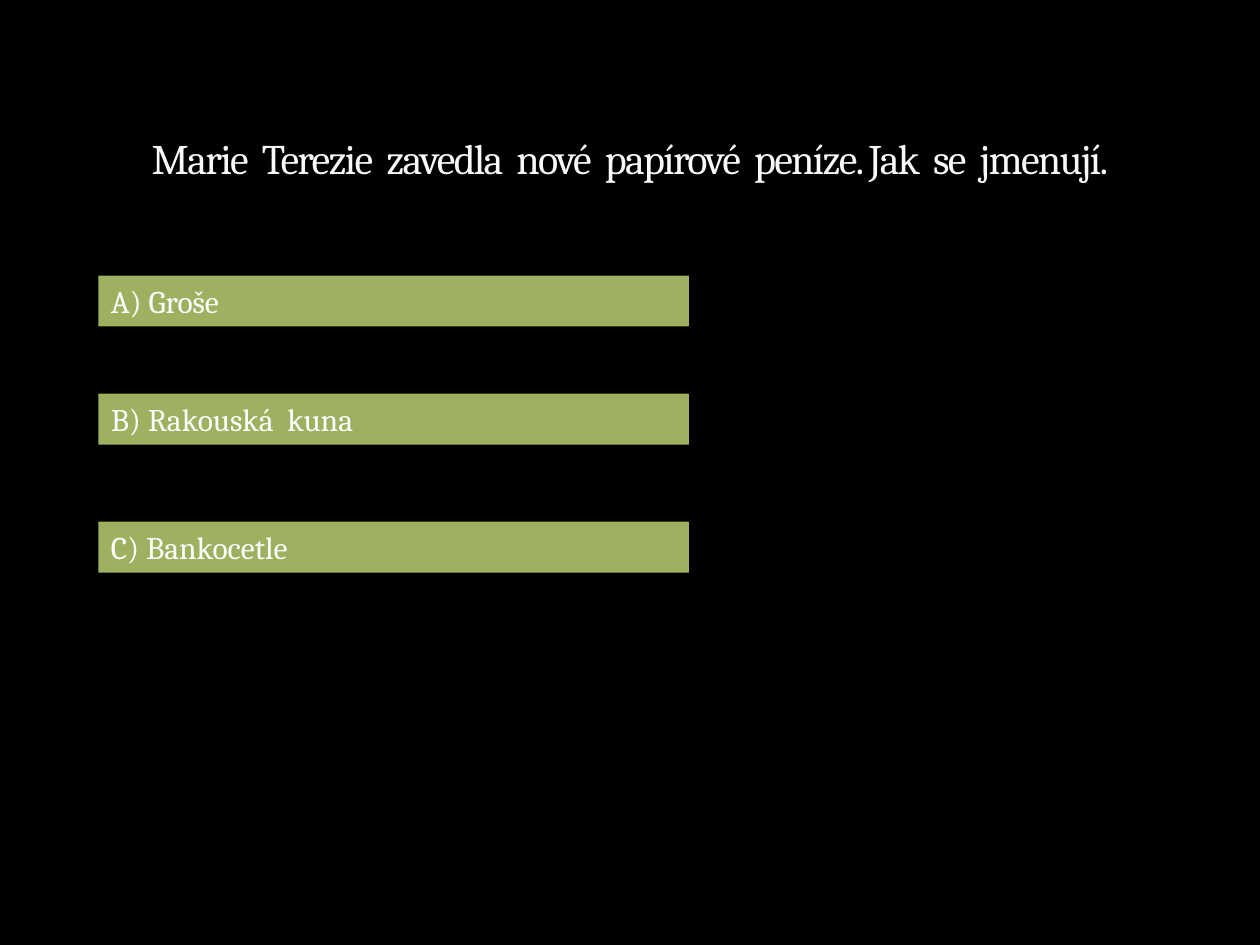
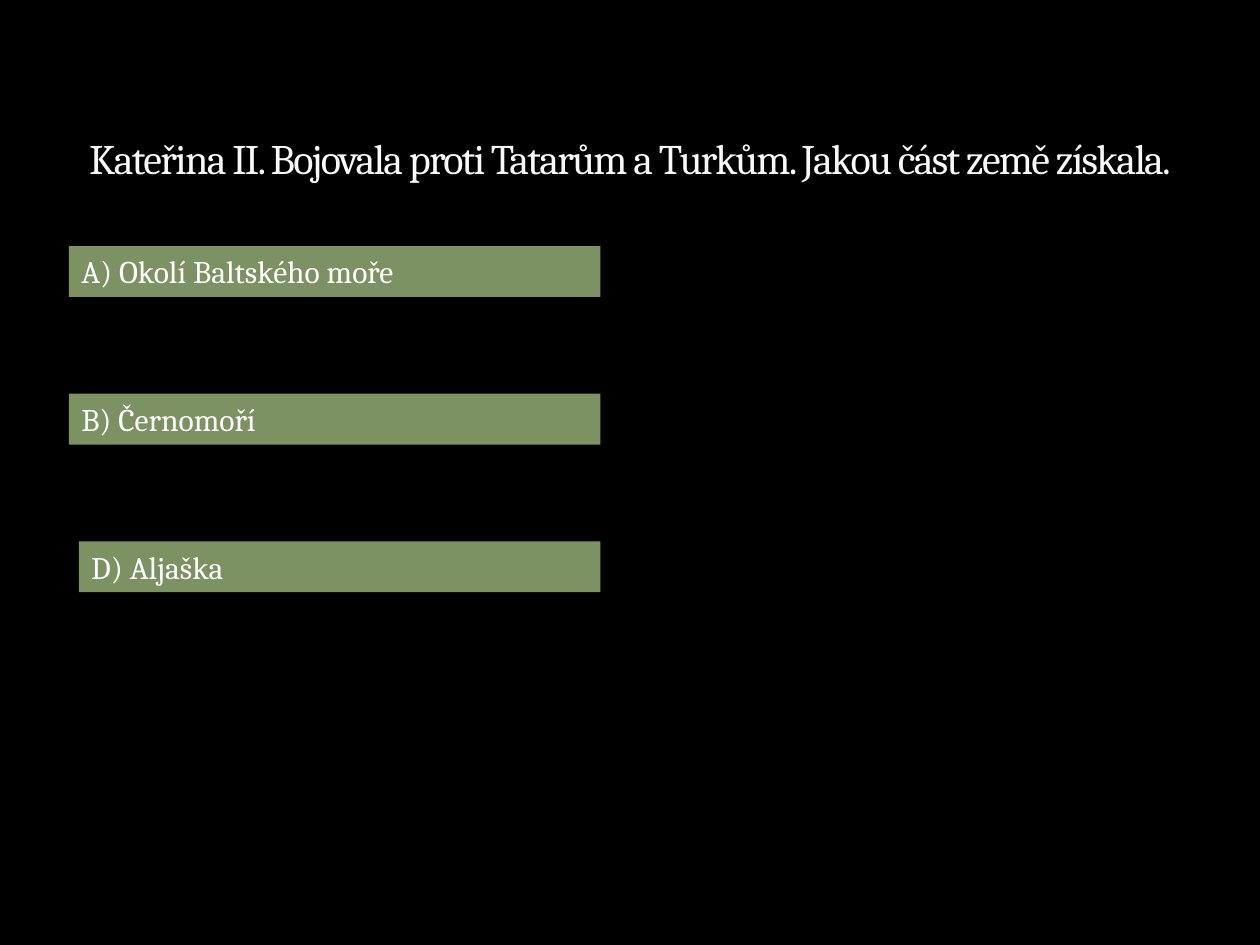
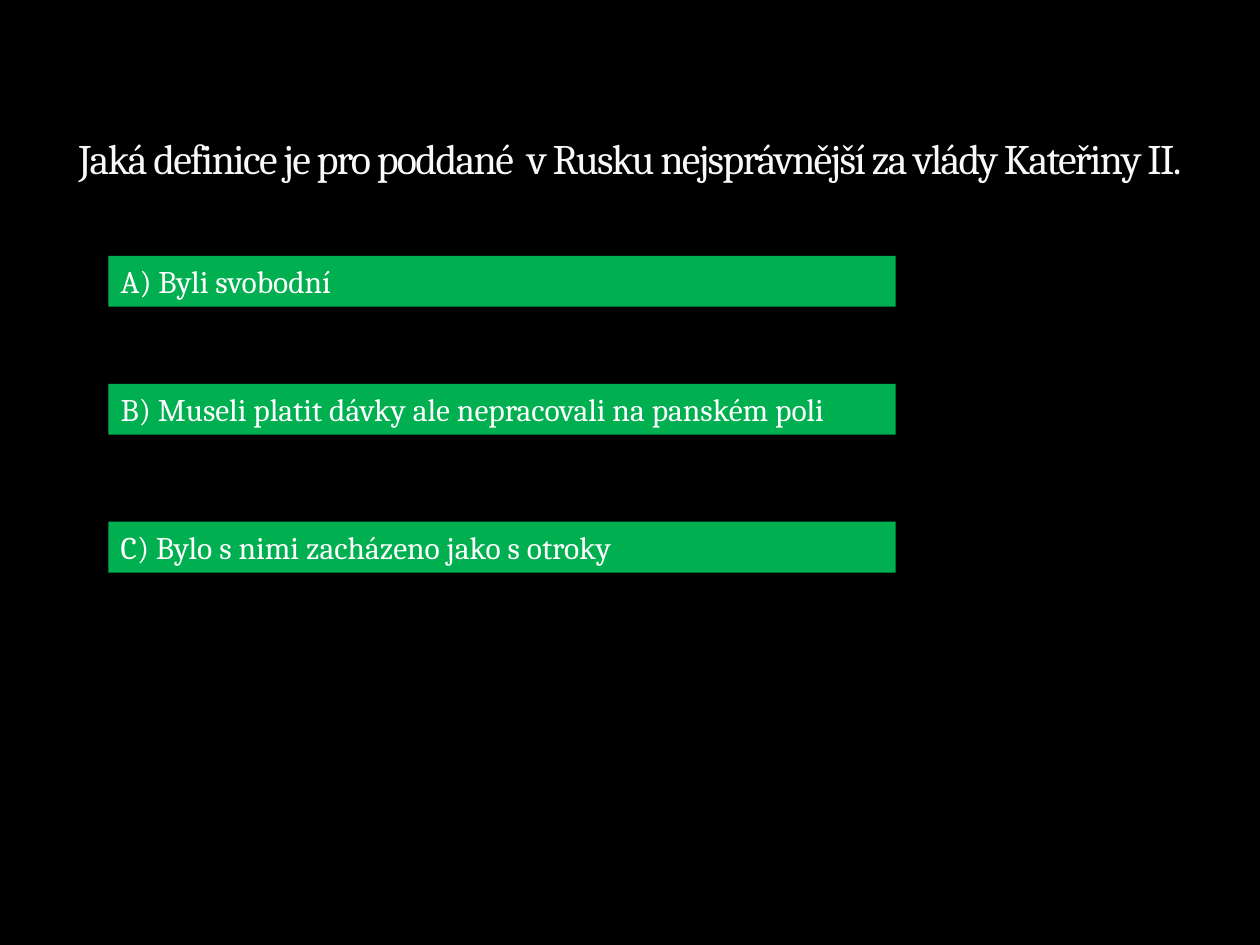
from lxml.etree import SubElement
from pptx import Presentation
from pptx.dml.color import RGBColor
from pptx.enum.shapes import MSO_SHAPE
from pptx.enum.text import MSO_ANCHOR, MSO_AUTO_SIZE, PP_ALIGN
from pptx.oxml.ns import qn
from pptx.util import Pt

WIDTH, HEIGHT = 720, 540
UNIT = HEIGHT / 96
FONT = "Cambria"
QUESTION_BOX = (36, 12, 648, 96)
ANSWER_HEIGHT = 29.08
COLOURS = {
    "background": "000000",
    "question": "F9F9F9",
    "question_outline": "3C4422",
    "answer": "FFFFFF",
    "olive": "9EB160",
    "sage": "7D9263",
    "green": "00B050",
}

# Answer areas are (left, width) in grid units; answers are (text, top, indent).
QUIZ = [
    ("Marie  Terezie  zavedla  nové  papírové  peníze. Jak  se  jmenují.",
     "olive", (10, 60),
     [("A) Groše", 28, 0), ("B) Rakouská  kuna", 40, 0), ("C) Bankocetle", 53, 0)]),
    ("Kateřina II. Bojovala proti Tatarům a Turkům. Jakou část země získala.",
     "sage", (7, 54),
     [("A) Okolí Baltského moře", 25, 0), ("B) Černomoří", 40, 0), ("D) Aljaška", 55, 1)]),
    ("Jaká definice je pro poddané  v Rusku nejsprávnější za vlády Kateřiny II.",
     "green", (11, 80),
     [("A) Byli svobodní", 26, 0),
      ("B) Museli platit dávky ale nepracovali na panském poli", 39, 0),
      ("C) Bylo s nimi zacházeno jako s otroky", 53, 0)]),
]


def colour(name):
    """Return the named colour."""
    return RGBColor.from_string(COLOURS[name])


def write(frame, text, size, colour_name, align):
    """Put one line of text in a frame and return its run."""
    frame.text = text
    frame.word_wrap = True
    paragraph = frame.paragraphs[0]
    paragraph.alignment = align
    run = paragraph.runs[0]
    run.font.name = FONT
    run.font.size = Pt(size)
    run.font.color.rgb = colour(colour_name)
    return run


def outline_and_tighten(run):
    """Give a run a faint outline and one point less letter spacing."""
    properties = run.font._element
    properties.set("spc", "-100")
    line = properties.makeelement(qn("a:ln"), {"w": str(Pt(0.25))})
    properties.insert(0, line)
    fill = SubElement(line, qn("a:solidFill"))
    tint = SubElement(fill, qn("a:srgbClr"), val=COLOURS["question_outline"])
    SubElement(tint, qn("a:alpha"), val="25000")


def add_question(slide, text, box):
    """Set the question centred at the bottom of its box."""
    question = slide.shapes.add_textbox(*map(Pt, box))
    frame = question.text_frame
    frame.vertical_anchor = MSO_ANCHOR.BOTTOM
    outline_and_tighten(write(frame, text, 24, "question", PP_ALIGN.CENTER))


def add_answer(slide, text, fill_name, box):
    """Draw one answer bar."""
    answer = slide.shapes.add_shape(MSO_SHAPE.RECTANGLE, *map(Pt, box))
    answer.shadow.inherit = False
    answer.fill.solid()
    answer.fill.fore_color.rgb = colour(fill_name)
    answer.line.fill.background()
    frame = answer.text_frame
    frame.vertical_anchor = MSO_ANCHOR.TOP
    write(frame, text, 18, "answer", PP_ALIGN.LEFT)
    frame.auto_size = MSO_AUTO_SIZE.SHAPE_TO_FIT_TEXT


def add_quiz_slide(deck, question, fill_name, area, answers):
    """Add a slide with a question and its answer bars."""
    slide = deck.slides.add_slide(deck.slide_layouts[6])
    slide.background.fill.solid()
    slide.background.fill.fore_color.rgb = colour("background")
    add_question(slide, question, QUESTION_BOX)
    left, width = area
    for text, top, indent in answers:
        box = ((left + indent) * UNIT, top * UNIT, (width - indent) * UNIT, ANSWER_HEIGHT)
        add_answer(slide, text, fill_name, box)


def main():
    """Build and save the quiz."""
    deck = Presentation()
    deck.slide_width, deck.slide_height = Pt(WIDTH), Pt(HEIGHT)
    for entry in QUIZ:
        add_quiz_slide(deck, *entry)
    deck.save("out.pptx")


if __name__ == "__main__":
    main()
